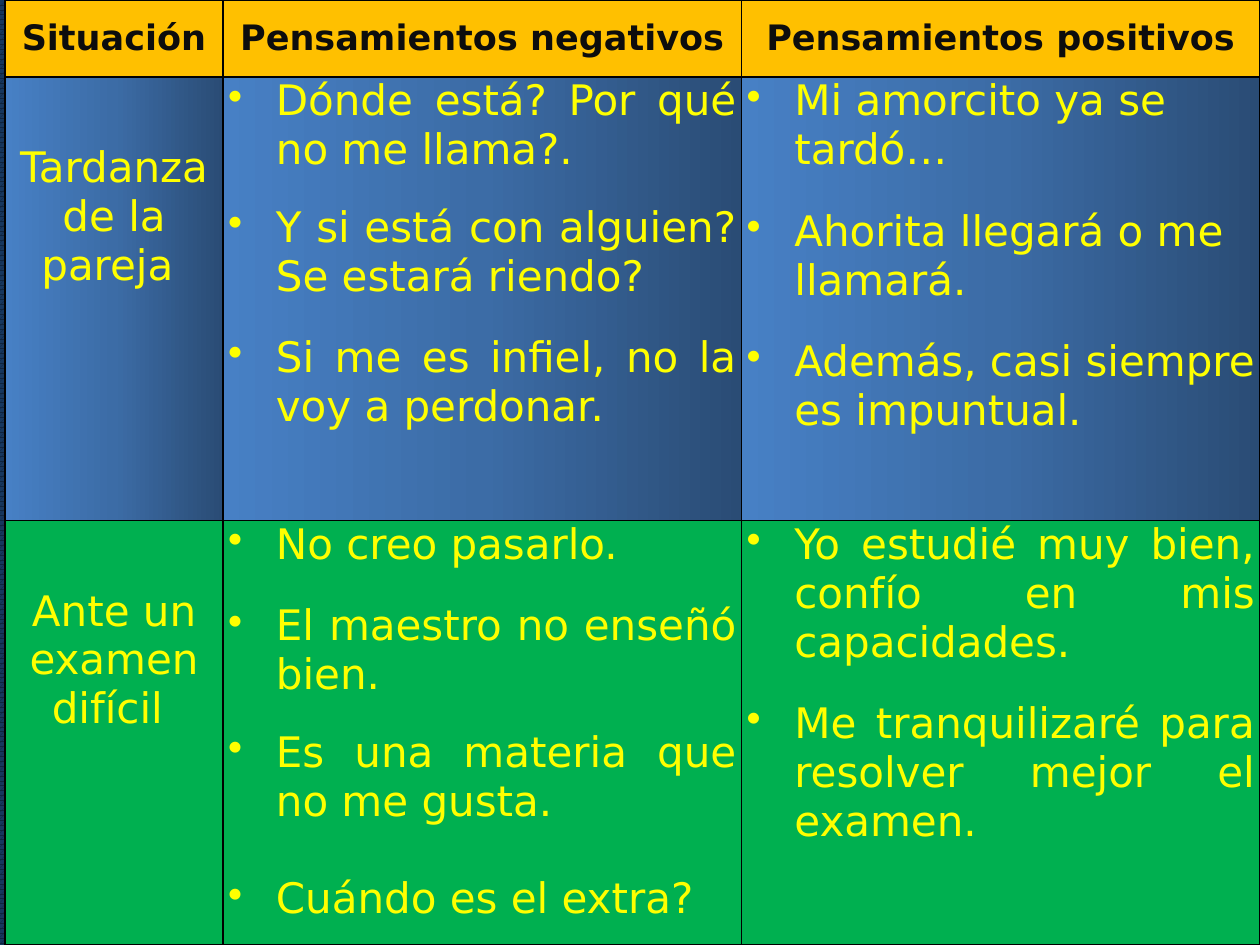
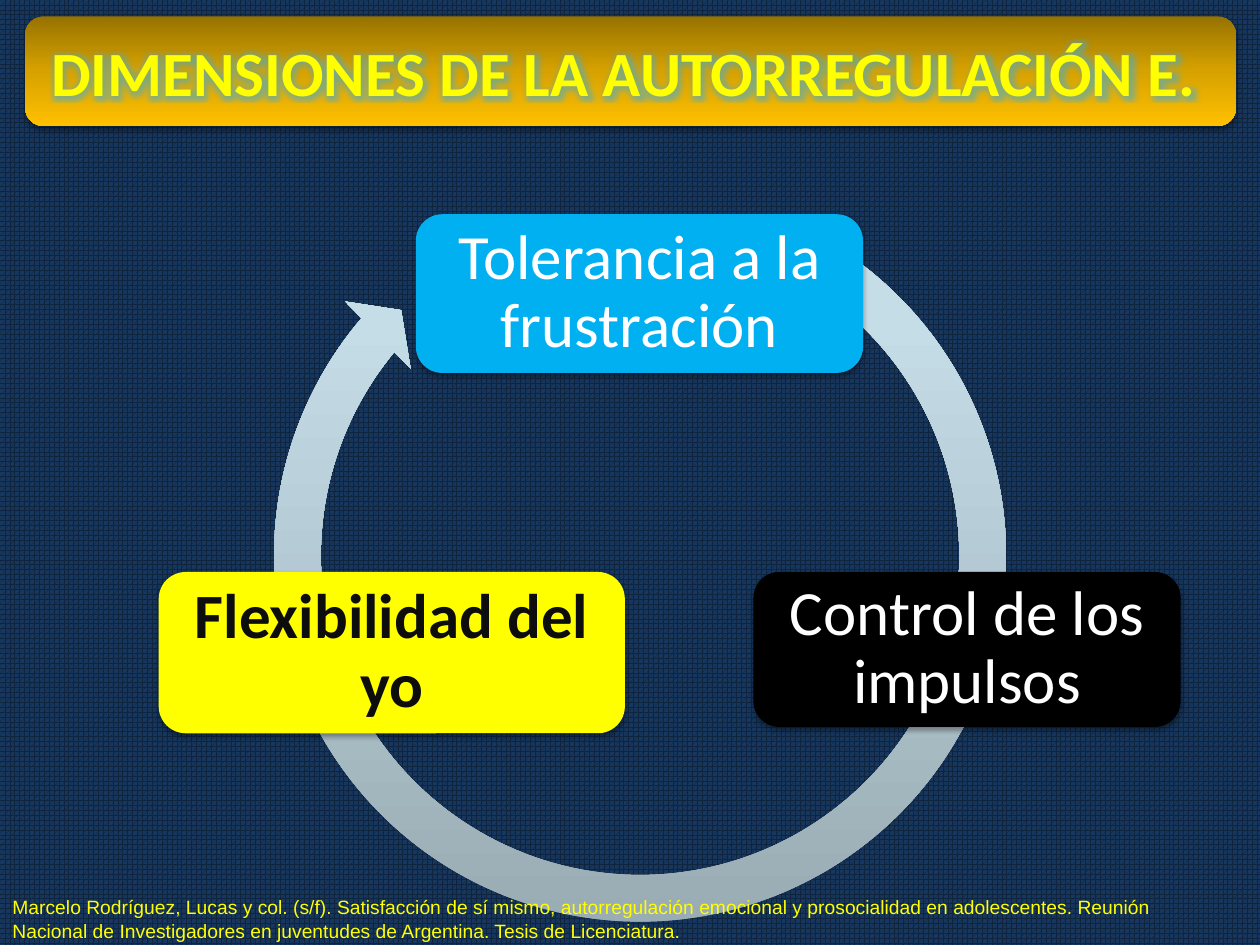
from dataclasses import dataclass
from typing import Any, NamedTuple

from lxml.etree import SubElement
from pptx import Presentation
from pptx.dml.color import RGBColor
from pptx.enum.dml import MSO_PATTERN
from pptx.enum.shapes import MSO_SHAPE
from pptx.enum.text import MSO_ANCHOR, PP_ALIGN
from pptx.oxml.ns import qn
from pptx.util import Inches, Pt

SPHERE = MSO_PATTERN.SPHERE
ROUNDED = MSO_SHAPE.ROUNDED_RECTANGLE
CIRCULAR_ARROW = MSO_SHAPE.CIRCULAR_ARROW
TOP, MIDDLE = MSO_ANCHOR.TOP, MSO_ANCHOR.MIDDLE
LEFT, CENTER, JUSTIFY = PP_ALIGN.LEFT, PP_ALIGN.CENTER, PP_ALIGN.JUSTIFY
SLIDE_WIDTH, SLIDE_HEIGHT = Inches(10), Inches(7.5)
BLANK_LAYOUT = 6


class Gradient(NamedTuple):
    stops: tuple[tuple[int, str], ...]
    angle: int


class Type(NamedTuple):
    font: str
    size: int
    color: str
    bold: bool = False


class Area(NamedTuple):
    left: float
    top: float
    width: float
    height: float

    def lengths(self) -> tuple[int, int, int, int]:
        return (across(self.left), down(self.top), across(self.width), down(self.height))


class Thought(NamedTuple):
    text: str
    gap: float = 0


class Dimension(NamedTuple):
    text: str
    area: Area
    fill: str
    style: Type


@dataclass(frozen=True)
class Situation:
    name: str
    fill: str | Gradient
    negative: tuple[Thought, ...]
    positive: tuple[Thought, ...]
    positive_align: Any


@dataclass(frozen=True)
class Theme:
    weave_front: str = "0F243E"
    weave_back: str = "17375E"
    border: str = "000000"
    amber: str = "FFC000"
    green: str = "00B050"
    sky: str = "00B0F0"
    black: str = "000000"
    yellow: str = "FFFF00"
    glow: str = "4BACC6"
    blue_fade: Gradient = Gradient(((0, "2A4C75"), (50, "3C6CA6"), (100, "4780C5")), 180)
    gold_fade: Gradient = Gradient(((0, "977200"), (50, "D7A200"), (100, "FFC000")), 270)
    cycle_fade: Gradient = Gradient(((0, "98AAB2"), (80, "C5DDE7"), (100, "C6DEE9")), 90)
    heading: Type = Type("DejaVu Sans", 20, "0D0D0D", True)
    thought: Type = Type("DejaVu Sans", 24, "FFFF00")
    title: Type = Type("Calibri", 36, "FFFF00", True)
    light_box: Type = Type("Calibri", 36, "FFFFFF")
    dark_box: Type = Type("Calibri", 36, "0D0D0D", True)
    citation: Type = Type("Arial", 11, "FFFF00")


THEME = Theme()
SMALL_GAP, MEDIUM_GAP, LARGE_GAP = 16.3, 18.6, 28

TABLE_AREA = Area(0.4, 0, 99.6, 100)
COLUMN_SHARES = (17.3, 41.15, 41.15)
ROW_SHARES = (8.13, 46.93, 44.94)
HEADINGS = ("Situación", "Pensamientos negativos", "Pensamientos positivos")
SITUATIONS = (
    Situation(
        "Tardanza de la pareja ",
        THEME.blue_fade,
        (
            Thought("Dónde está? Por qué no me llama?."),
            Thought("Y si está con alguien? Se estará riendo?", SMALL_GAP),
            Thought("Si me es infiel, no la voy a perdonar.", MEDIUM_GAP),
        ),
        (
            Thought("Mi amorcito ya se tardó…"),
            Thought("Ahorita llegará o me llamará.", MEDIUM_GAP),
            Thought("Además, casi siempre es impuntual.", MEDIUM_GAP),
        ),
        LEFT,
    ),
    Situation(
        "Ante un examen difícil ",
        THEME.green,
        (
            Thought("No creo pasarlo."),
            Thought("El maestro no enseñó bien.", MEDIUM_GAP),
            Thought("Es una materia que no me gusta.", SMALL_GAP),
            Thought("Cuándo es el extra?", LARGE_GAP),
        ),
        (
            Thought("Yo estudié muy bien, confío en mis capacidades."),
            Thought("Me tranquilizaré para resolver mejor el examen.", MEDIUM_GAP),
        ),
        JUSTIFY,
    ),
)

TITLE = "DIMENSIONES DE LA AUTORREGULACIÓN E. "
TITLE_AREA = Area(2, 1.73, 96.1, 11.6)
CYCLE_AREA = Area(19.9, 17.6, 61.8, 82.4)
CYCLE_ADJUSTMENTS = (0.06, 3.41, 132.05, 177.38, 0.06)
DIMENSIONS = (
    Dimension("Tolerancia a la frustración", Area(33, 22.67, 35.5, 16.8), THEME.sky, THEME.light_box),
    Dimension("Control de los impulsos", Area(59.8, 60.53, 33.9, 16.4), THEME.black, THEME.light_box),
    Dimension("Flexibilidad del yo", Area(12.6, 60.53, 37, 17.07), THEME.yellow, THEME.dark_box),
)
CITATION_AREA = Area(0, 94.13, 97.2, 5.87)
CITATION = (
    "Marcelo Rodríguez, Lucas y col. (s/f). Satisfacción de sí mismo, autorregulación emocional "
    "y prosocialidad en adolescentes. Reunión Nacional de Investigadores en juventudes de "
    "Argentina. Tesis de Licenciatura."
)


def across(share: float) -> int:
    return round(SLIDE_WIDTH * share / 100)


def down(share: float) -> int:
    return round(SLIDE_HEIGHT * share / 100)


def assign(target: Any, values: dict[str, Any]) -> None:
    for name, value in values.items():
        setattr(target, name, value)


def add_color(parent: Any, color: str, alpha: int | None = None) -> None:
    swatch = SubElement(parent, qn("a:srgbClr"), val=color)
    if alpha is not None:
        SubElement(swatch, qn("a:alpha"), val=str(alpha * 1000))


def paint(fill: Any, properties: Any, paint_value: str | Gradient) -> None:
    if isinstance(paint_value, str):
        fill.solid()
        fill.fore_color.rgb = RGBColor.from_string(paint_value)
        return
    fill.gradient()
    fill.gradient_angle = paint_value.angle
    stop_list = next(properties.iter(qn("a:gsLst")))
    for stop in list(stop_list):
        stop_list.remove(stop)
    for position, color in paint_value.stops:
        add_color(SubElement(stop_list, qn("a:gs"), pos=str(position * 1000)), color)


def write(paragraph: Any, text: str, style: Type, layout: dict[str, Any]) -> Any:
    assign(paragraph, layout)
    run = paragraph.add_run()
    run.text = text
    assign(run.font, {"name": style.font, "size": Pt(style.size), "bold": style.bold})
    run.font.color.rgb = RGBColor.from_string(style.color)
    return run


def add_bullet(paragraph: Any) -> None:
    properties = paragraph._p.get_or_add_pPr()
    indent = Inches(0.38)
    properties.set("marL", str(indent))
    properties.set("indent", str(-indent))
    SubElement(properties, qn("a:buChar"), char="•")


def format_cell(cell: Any, fill: str | Gradient, anchor: Any, top: float = 0) -> None:
    side = Inches(0.04)
    assign(cell, {
        "margin_left": side, "margin_right": side, "margin_top": Inches(top),
        "margin_bottom": 0, "vertical_anchor": anchor,
    })
    properties = cell._tc.get_or_add_tcPr()
    for edge in ("a:lnL", "a:lnR", "a:lnT", "a:lnB"):
        line = SubElement(properties, qn(edge), w=str(Pt(1)))
        add_color(SubElement(line, qn("a:solidFill")), THEME.border)
    paint(cell.fill, properties, fill)


def list_thoughts(cell: Any, thoughts: tuple[Thought, ...], align: Any) -> None:
    frame = cell.text_frame
    for index, thought in enumerate(thoughts):
        paragraph = frame.add_paragraph() if index else frame.paragraphs[0]
        write(paragraph, thought.text, THEME.thought,
              {"alignment": align, "space_before": Pt(thought.gap)})
        add_bullet(paragraph)


def add_panel(slide: Any, kind: Any, area: Area, fill: str | Gradient, shadowed: bool = True) -> Any:
    panel = slide.shapes.add_shape(kind, *area.lengths())
    panel.shadow.inherit = False
    panel.line.fill.background()
    properties = panel._element.spPr
    paint(panel.fill, properties, fill)
    if shadowed:
        effects = properties.find(qn("a:effectLst"))
        shadow = SubElement(effects, qn("a:outerShdw"), blurRad=str(Pt(3.1)),
                            dist=str(Pt(1.8)), dir="5400000", rotWithShape="0")
        add_color(shadow, THEME.black, 35)
    return panel


def add_glow(run: Any) -> None:
    properties = run._r.get_or_add_rPr()
    effects = SubElement(properties, qn("a:effectLst"))
    properties.find(qn("a:solidFill")).addnext(effects)
    add_color(SubElement(effects, qn("a:glow"), rad=str(Pt(8))), THEME.glow, 60)


def add_woven_slide(deck: Any) -> Any:
    slide = deck.slides.add_slide(deck.slide_layouts[BLANK_LAYOUT])
    weave = slide.background.fill
    weave.patterned()
    weave.pattern = SPHERE
    weave.fore_color.rgb = RGBColor.from_string(THEME.weave_front)
    weave.back_color.rgb = RGBColor.from_string(THEME.weave_back)
    return slide


def build_thoughts(deck: Any) -> None:
    slide = add_woven_slide(deck)
    grid = slide.shapes.add_table(len(ROW_SHARES), len(COLUMN_SHARES), *TABLE_AREA.lengths()).table
    assign(grid, {"first_row": False, "horz_banding": False})
    for column, share in zip(grid.columns, COLUMN_SHARES):
        column.width = across(share)
    for row, share in zip(grid.rows, ROW_SHARES):
        row.height = down(share)
    for column, heading in enumerate(HEADINGS):
        cell = grid.cell(0, column)
        format_cell(cell, THEME.amber, MIDDLE)
        write(cell.text_frame.paragraphs[0], heading, THEME.heading,
              {"alignment": CENTER, "space_after": Pt(10)})
    for row, situation in enumerate(SITUATIONS, start=1):
        name, negative, positive = (grid.cell(row, column) for column in range(3))
        format_cell(name, situation.fill, TOP, 0.53)
        write(name.text_frame.paragraphs[0], situation.name, THEME.thought, {"alignment": CENTER})
        for cell in (negative, positive):
            format_cell(cell, situation.fill, TOP)
        list_thoughts(negative, situation.negative, JUSTIFY)
        list_thoughts(positive, situation.positive, situation.positive_align)


def build_dimensions(deck: Any) -> None:
    slide = add_woven_slide(deck)
    cycle = add_panel(slide, CIRCULAR_ARROW, CYCLE_AREA, THEME.cycle_fade, shadowed=False)
    for index, value in enumerate(CYCLE_ADJUSTMENTS):
        cycle.adjustments[index] = value
    inset = Inches(0.21)
    for dimension in DIMENSIONS:
        frame = add_panel(slide, ROUNDED, dimension.area, dimension.fill).text_frame
        assign(frame, {
            "margin_left": inset, "margin_right": inset, "margin_top": inset,
            "margin_bottom": inset, "vertical_anchor": MIDDLE, "word_wrap": True,
        })
        write(frame.paragraphs[0], dimension.text, dimension.style,
              {"alignment": CENTER, "line_spacing": 0.9})
    banner = add_panel(slide, ROUNDED, TITLE_AREA, THEME.gold_fade).text_frame
    assign(banner, {"vertical_anchor": MIDDLE, "word_wrap": True})
    add_glow(write(banner.paragraphs[0], TITLE, THEME.title, {"alignment": CENTER}))
    source = slide.shapes.add_textbox(*CITATION_AREA.lengths()).text_frame
    source.word_wrap = True
    write(source.paragraphs[0], CITATION, THEME.citation, {"alignment": LEFT})


def main() -> None:
    deck = Presentation()
    assign(deck, {"slide_width": SLIDE_WIDTH, "slide_height": SLIDE_HEIGHT})
    build_thoughts(deck)
    build_dimensions(deck)
    deck.save("out.pptx")


if __name__ == "__main__":
    main()
